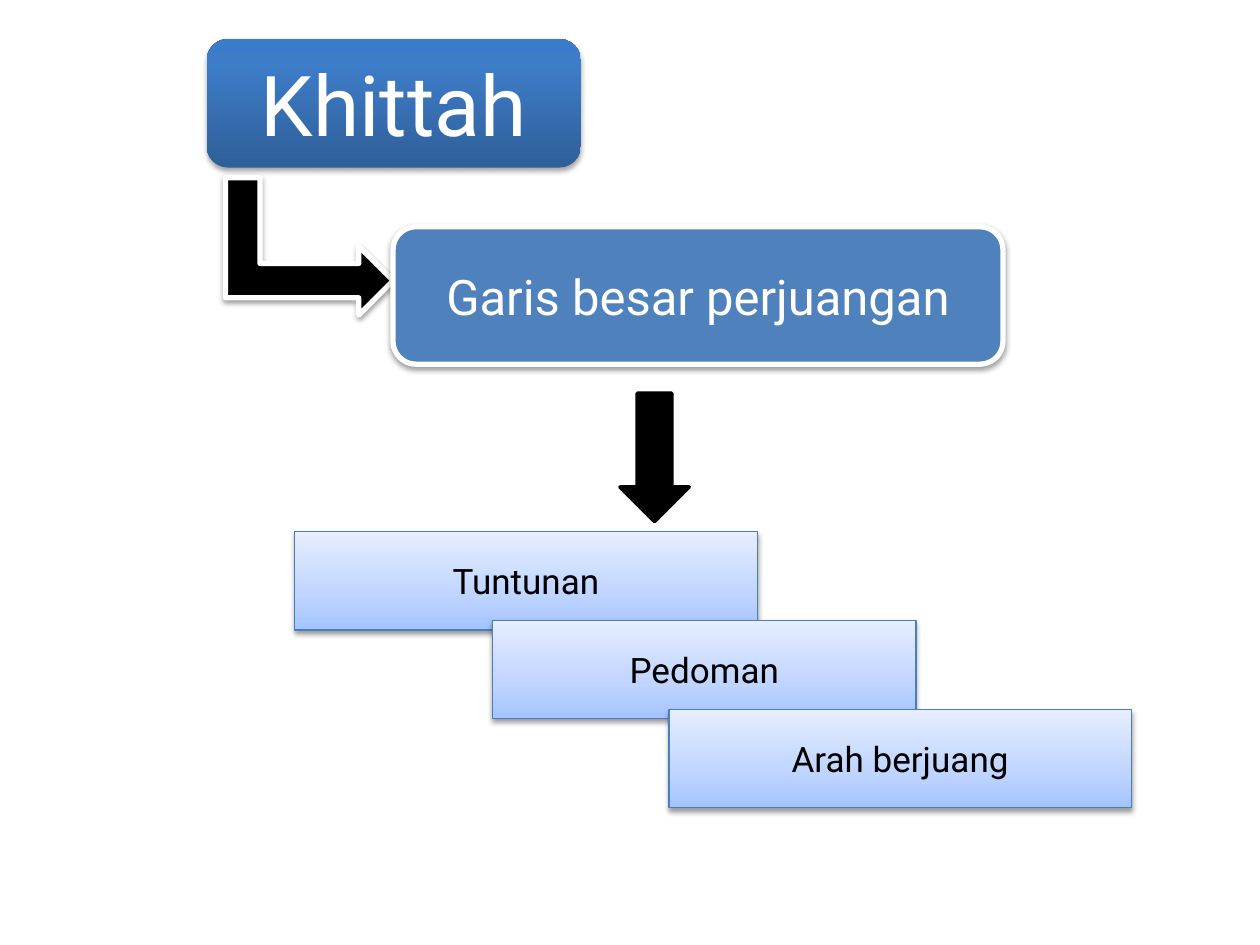
"""Build the Khittah slide: a term, its meaning and three stepped boxes."""
from lxml import etree
from pptx import Presentation
from pptx.dml.color import RGBColor
from pptx.enum import shapes, text
from pptx.oxml import ns
from pptx.util import Inches, Pt

BLACK = RGBColor(0, 0, 0)
WHITE = RGBColor(255, 255, 255)
BLUE = RGBColor(0x4F, 0x81, 0xBD)
EDGE = RGBColor(0x4B, 0x7E, 0xBC)
DEEP = [(0, RGBColor(0x2F, 0x5F, 0x99)), (80, RGBColor(0x3D, 0x7C, 0xC7)),
        (100, RGBColor(0x3A, 0x7C, 0xCB))]
PALE = [(0, RGBColor(0xA4, 0xC4, 0xFF)), (35, RGBColor(0xBF, 0xD4, 0xFF)),
        (100, RGBColor(0xE6, 0xEE, 0xFF))]
FONT = "Roboto"
KIND = shapes.MSO_SHAPE

TERM = "Khittah"
SENSE = "Garis besar perjuangan"
STEPS = [("Tuntunan", 2.34, 3.67), ("Pedoman", 3.91, 3.36),
         ("Arah berjuang", 5.31, 3.67)]
TOP, RISE, TALL = 4.22, 0.705, 0.78


def put(parent, tag, **attrs):
    return etree.SubElement(parent, ns.qn("a:" + tag),
                            {key: str(val) for key, val in attrs.items()})


def blend(fill, stops):
    fill.gradient()
    fill.gradient_angle = 90
    group = fill._fill._gradFill.find(ns.qn("a:gsLst"))
    for old in list(group):
        group.remove(old)
    for pos, color in stops:
        put(put(group, "gs", pos=pos * 1000), "srgbClr", val=color)


def shade(shape, alpha, dist):
    effects = shape._element.spPr.find(ns.qn("a:effectLst"))
    outer = put(effects, "outerShdw", blurRad=Pt(3.1), dist=Pt(dist),
                dir=5400000, rotWithShape=0)
    put(put(outer, "srgbClr", val=BLACK), "alpha", val=alpha * 1000)


def draw(slide, kind, box, paint, line=None, shadow=(38, 1.6)):
    shape = slide.shapes.add_shape(kind, *map(Inches, box))
    shape.shadow.inherit = False
    if isinstance(paint, list):
        blend(shape.fill, paint)
    else:
        shape.fill.solid()
        shape.fill.fore_color.rgb = paint
    if line:
        shape.line.color.rgb, shape.line.width = line[0], Pt(line[1])
    else:
        shape.line.fill.background()
    if shadow:
        shade(shape, *shadow)
    return shape


def label(shape, words, size, color):
    frame = shape.text_frame
    frame.word_wrap = True
    frame.vertical_anchor = text.MSO_ANCHOR.MIDDLE
    para = frame.paragraphs[0]
    para.text = words
    para.alignment = text.PP_ALIGN.CENTER
    para.font.name, para.font.size = FONT, Pt(size)
    para.font.color.rgb = color


def main():
    deck = Presentation()
    deck.slide_width, deck.slide_height = Inches(10), Inches(7.5)
    slide = deck.slides.add_slide(deck.slide_layouts[6])

    term = draw(slide, KIND.ROUNDED_RECTANGLE, (1.64, 0.31, 2.97, 1.02),
                DEEP, shadow=(35, 1.8))
    label(term, TERM, 48, WHITE)
    bend = draw(slide, KIND.BENT_UP_ARROW, (1.91, 1.29, 1.09, 1.33),
                BLACK, (WHITE, 3))
    bend.rotation = 90
    sense = draw(slide, KIND.ROUNDED_RECTANGLE, (3.12, 1.8, 4.84, 1.09),
                 BLUE, (WHITE, 3))
    label(sense, SENSE, 28, WHITE)
    draw(slide, KIND.DOWN_ARROW, (4.92, 3.12, 0.55, 1.02),
         BLACK, (BLACK, 2), shadow=None)

    for row, (words, left, wide) in enumerate(STEPS):
        step = draw(slide, KIND.RECTANGLE,
                    (left, TOP + row * RISE, wide, TALL), PALE, (EDGE, 0.75))
        label(step, words, 20, BLACK)

    deck.save("out.pptx")


if __name__ == "__main__":
    main()
